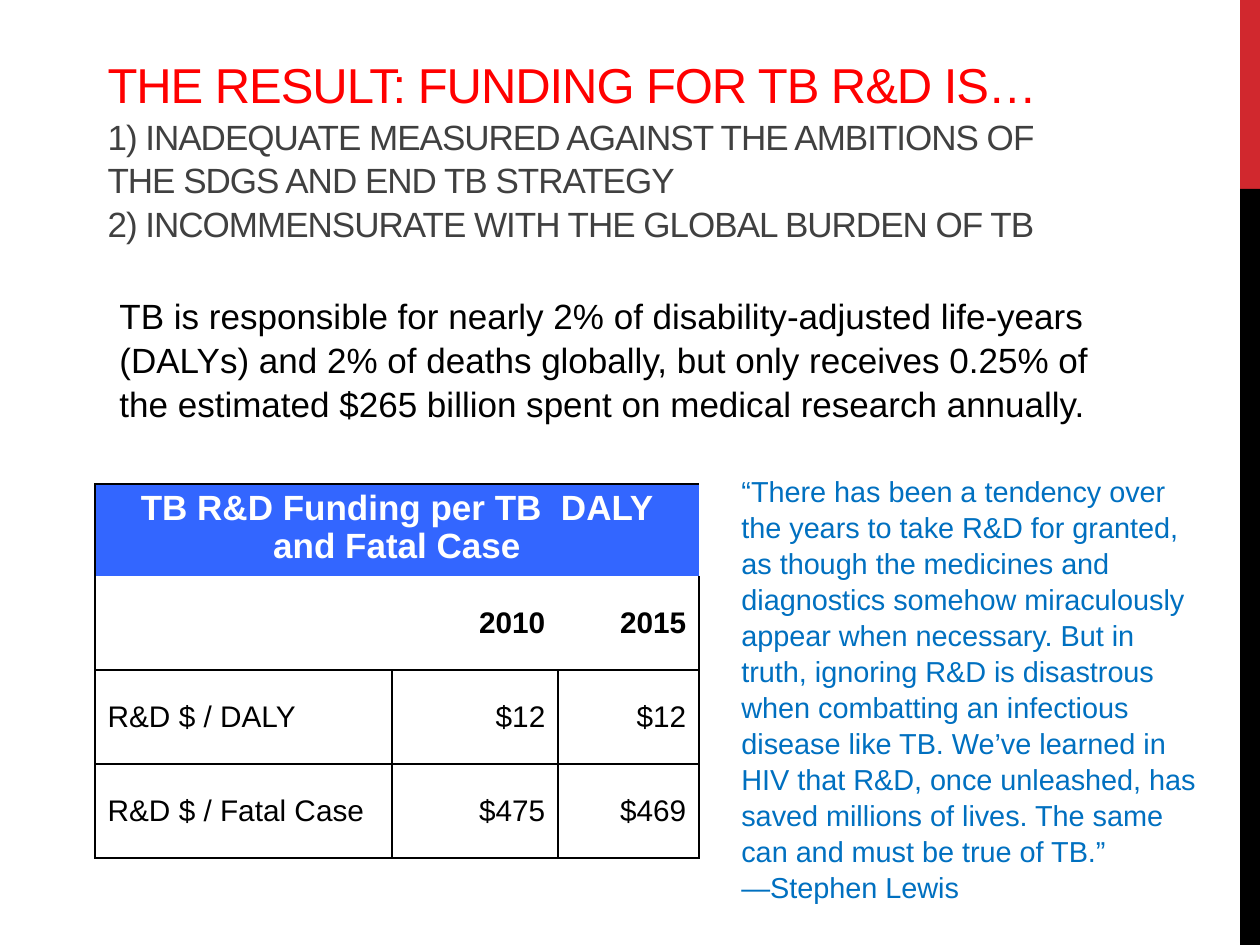
from copy import deepcopy
from dataclasses import dataclass

from pptx import Presentation
from pptx.dml.color import RGBColor
from pptx.enum.shapes import MSO_SHAPE
from pptx.enum.text import MSO_ANCHOR, MSO_AUTO_SIZE, PP_ALIGN
from pptx.oxml.ns import qn
from pptx.oxml.xmlchemy import OxmlElement
from pptx.slide import Slide
from pptx.table import _Cell
from pptx.text.text import TextFrame, _Paragraph

RECT = MSO_SHAPE.RECTANGLE
TOP, MID = MSO_ANCHOR.TOP, MSO_ANCHOR.MIDDLE
LEFT, MIDST, RIGHT = PP_ALIGN.LEFT, PP_ALIGN.CENTER, PP_ALIGN.RIGHT
FIXED = MSO_AUTO_SIZE.NONE
SCALE = 914400 / 126
POINT = 12700


@dataclass(frozen=True)
class Theme:
    font: str = "Arial"
    black: str = "000000"
    white: str = "FFFFFF"
    red: str = "FF0000"
    grey: str = "404040"
    blue: str = "0070C0"
    head: str = "3366FF"
    band: str = "D1282E"
    big: float = 28
    body: float = 20
    cell: float = 17
    quote: float = 16.5
    lead: float = 1.04
    tight: float = 0.97


@dataclass(frozen=True)
class Box:
    x: int
    y: int
    w: int
    h: int

    def emu(self) -> list[int]:
        return [px(n) for n in (self.x, self.y, self.w, self.h)]


@dataclass(frozen=True)
class Bar:
    box: Box
    fill: str


@dataclass(frozen=True)
class Note:
    box: Box
    text: str
    size: float
    color: str


THEME = Theme()

BARS = [
    Bar(Box(1240, 0, 20, 189), THEME.band),
    Bar(Box(1240, 189, 20, 756), THEME.black),
]

TITLE = Box(95, 54, 988, 189)
LINES = [
    ("THE RESULT: FUNDING FOR TB R&D IS…", THEME.big, THEME.red),
    ("1) INADEQUATE MEASURED AGAINST THE AMBITIONS OF THE SDGS AND END TB STRATEGY",
     THEME.body, THEME.grey),
    ("2) INCOMMENSURATE WITH THE GLOBAL BURDEN OF TB", THEME.body, THEME.grey),
]

NOTES = [
    Note(
        Box(107, 287, 1002, 140),
        "TB is responsible for nearly 2% of disability-adjusted life-years (DALYs) "
        "and 2% of deaths globally, but only receives 0.25% of the estimated "
        "$265 billion spent on medical research annually.",
        THEME.body, THEME.black,
    ),
    Note(
        Box(729, 466, 485, 432),
        "“There has been a tendency over the years to take R&D for granted, as though "
        "the medicines and diagnostics somehow miraculously appear when necessary. "
        "But in truth, ignoring R&D is disastrous when combatting an infectious "
        "disease like TB. We’ve learned in HIV that R&D, once unleashed, has saved "
        "millions of lives. The same can and must be true of TB.”\n—Stephen Lewis",
        THEME.quote, THEME.blue,
    ),
]

GRID = Box(95, 484, 604, 374)
COLS = [297, 166, 141]
ROWS = [92, 94, 94, 94]
DATA = [
    ["TB R&D Funding per TB  DALY and Fatal Case", "", ""],
    ["", "2010", "2015"],
    ["R&D $ / DALY", "$12", "$12"],
    ["R&D $ / Fatal Case", "$475", "$469"],
]


def px(n: int) -> int:
    return round(n * SCALE)


def style(para: _Paragraph, size: float, color: str, bold: bool = False) -> None:
    for run in para.runs:
        font = run.font
        font.name = THEME.font
        font.size = round(size * POINT)
        font.bold = bold
        font.color.rgb = RGBColor.from_string(color)


def draw_bar(slide: Slide, bar: Bar) -> None:
    shape = slide.shapes.add_shape(RECT, *bar.box.emu())
    shape.shadow.inherit = False
    shape.fill.solid()
    shape.fill.fore_color.rgb = RGBColor.from_string(bar.fill)
    shape.line.fill.background()


def draw_title(slide: Slide) -> None:
    title = slide.shapes.title
    title.left, title.top, title.width, title.height = TITLE.emu()
    frame: TextFrame = title.text_frame
    frame.auto_size = FIXED
    frame.word_wrap = True
    frame.vertical_anchor = MID
    para = frame.paragraphs[0]
    para.text = "\v".join(line[0] for line in LINES)
    para.alignment = LEFT
    para.line_spacing = THEME.lead
    style(para, THEME.body, THEME.grey)
    for run, (_, size, color) in zip(para.runs, LINES):
        run.font.size = round(size * POINT)
        run.font.color.rgb = RGBColor.from_string(color)
        run.font._element.set("spc", "-60")
    for run, stop in zip(para.runs, para._p.findall(qn("a:br"))):
        stop.append(deepcopy(run.font._element))


def draw_note(slide: Slide, note: Note) -> None:
    frame = slide.shapes.add_textbox(*note.box.emu()).text_frame
    frame.word_wrap = True
    frame.text = note.text
    for para in frame.paragraphs:
        para.line_spacing = THEME.lead
        style(para, note.size, note.color)


def draw_edges(cell: _Cell, edges: str) -> None:
    props = cell._tc.get_or_add_tcPr()
    for side in "LRTB":
        line = OxmlElement(f"a:ln{side}")
        line.set("w", str(POINT))
        props.append(line)
        if side in edges:
            fill = OxmlElement("a:solidFill")
            tint = OxmlElement("a:srgbClr")
            tint.set("val", THEME.black)
            fill.append(tint)
        else:
            fill = OxmlElement("a:noFill")
        line.append(fill)


def edges_at(row: int, col: int) -> str:
    if row > 1:
        return "LRTB"
    ends = {0: "L", len(COLS) - 1: "R"}
    return ends.get(col, "") + "TB"[row]


def draw_cell(cell: _Cell, row: int, col: int) -> None:
    head = row == 0
    draw_edges(cell, edges_at(row, col))
    cell.fill.solid()
    cell.fill.fore_color.rgb = RGBColor.from_string(THEME.head if head else THEME.white)
    cell.vertical_anchor = TOP if head else MID
    cell.text_frame.text = DATA[row][col]
    para = cell.text_frame.paragraphs[0]
    para.alignment = MIDST if head else RIGHT if col else LEFT
    if head:
        para.line_spacing = THEME.tight
        style(para, THEME.body, THEME.white, True)
    else:
        style(para, THEME.cell, THEME.black, row == 1)


def draw_table(slide: Slide) -> None:
    table = slide.shapes.add_table(len(ROWS), len(COLS), *GRID.emu()).table
    table.first_row = table.horz_banding = False
    for col, width in zip(table.columns, COLS):
        col.width = px(width)
    for row, height in zip(table.rows, ROWS):
        row.height = px(height)
    for row in range(len(ROWS)):
        for col in range(len(COLS)):
            draw_cell(table.cell(row, col), row, col)
    table.cell(0, 0).merge(table.cell(0, len(COLS) - 1))


def main() -> None:
    deck = Presentation()
    deck.slide_width, deck.slide_height = px(1260), px(945)
    slide = deck.slides.add_slide(deck.slide_layouts[5])
    for bar in BARS:
        draw_bar(slide, bar)
    draw_title(slide)
    draw_table(slide)
    for note in NOTES:
        draw_note(slide, note)
    deck.save("out.pptx")


if __name__ == "__main__":
    main()
